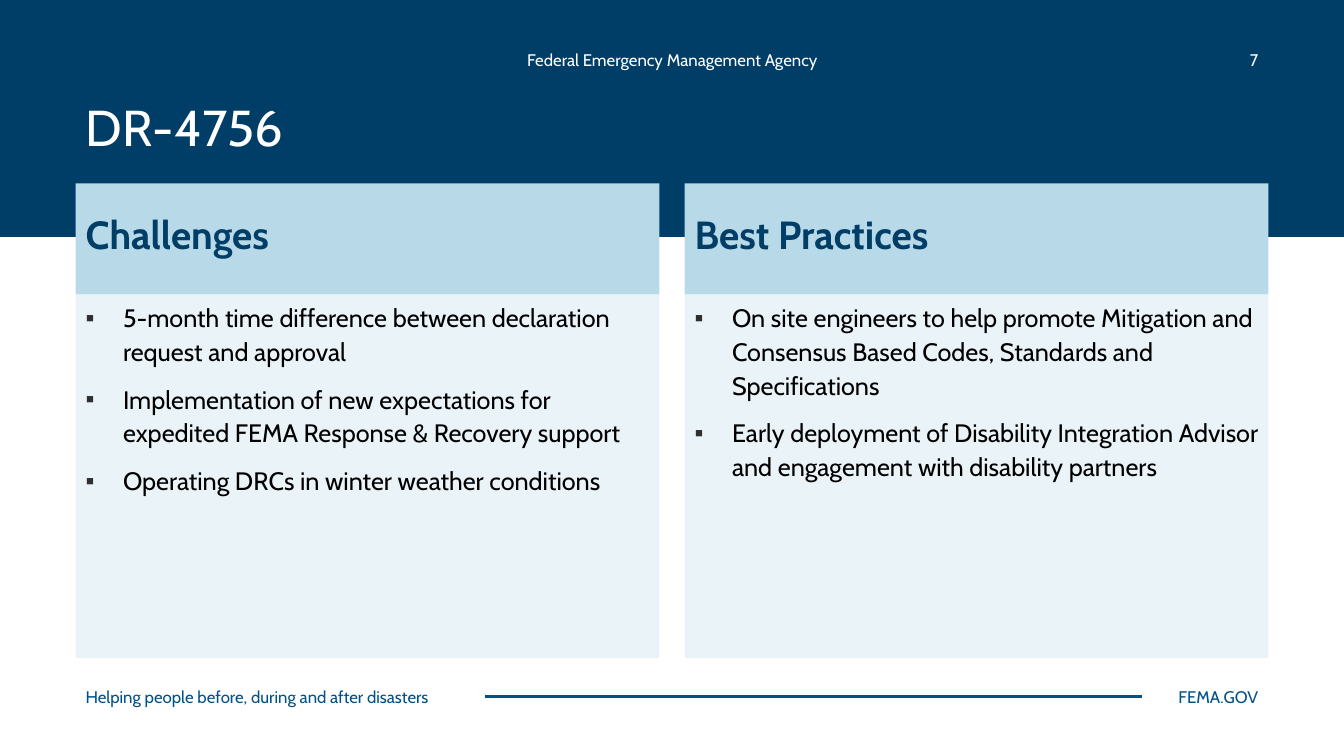
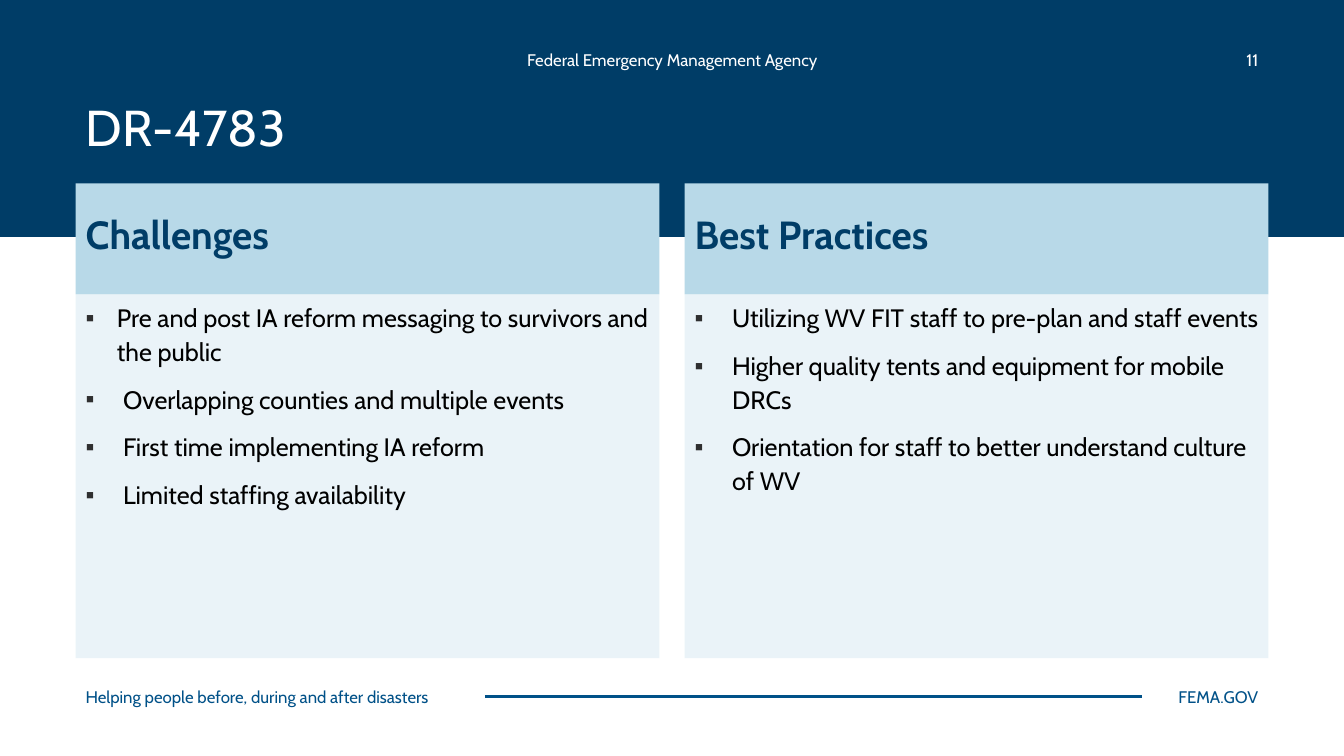
from lxml import etree
from pptx import Presentation
from pptx.dml.color import RGBColor
from pptx.enum.shapes import MSO_CONNECTOR, MSO_SHAPE
from pptx.enum.text import MSO_ANCHOR as Anchor, MSO_AUTO_SIZE as AutoSize, PP_ALIGN as Align
from pptx.oxml.ns import qn
from pptx.util import Inches, Pt

FONT = "Cabin"
NAVY = RGBColor(0x00, 0x3D, 0x67)
BLUE = RGBColor(0x00, 0x51, 0x88)
SKY = RGBColor(0xB8, 0xD9, 0xE8)
PALE = RGBColor(0xD6, 0xE9, 0xF2)
WHITE = RGBColor(0xFF, 0xFF, 0xFF)
BLACK = RGBColor(0x00, 0x00, 0x00)
BULLET_GRAY = "2F2F30"

HANG = 0.37
NARROW_HANG = 0.31

SLIDES = [
    {
        "title": "DR-4756",
        "number": "7",
        "columns": [
            ("Challenges", [
                ("5-month time difference between declaration request and approval", HANG),
                ("Implementation of new expectations for expedited FEMA Response & Recovery support", HANG),
                ("Operating DRCs in winter weather conditions", HANG),
            ]),
            ("Best Practices", [
                ("On site engineers to help promote Mitigation and Consensus Based Codes, "
                 "Standards and Specifications", HANG),
                ("Early deployment of Disability Integration Advisor and engagement with "
                 "disability partners", HANG),
            ]),
        ],
    },
    {
        "title": "DR-4783",
        "number": "11",
        "columns": [
            ("Challenges", [
                ("Pre and post IA reform messaging to survivors and the public", NARROW_HANG),
                ("Overlapping counties and multiple events", HANG),
                ("First time implementing IA reform", HANG),
                ("Limited staffing availability", HANG),
            ]),
            ("Best Practices", [
                ("Utilizing WV FIT staff to pre-plan and staff events", HANG),
                ("Higher quality tents and equipment for mobile DRCs", HANG),
                ("Orientation for staff to better understand culture of WV", HANG),
            ]),
        ],
    },
]

PAGE_WIDTH, PAGE_HEIGHT = 13.33, 7.5
MARGIN = 0.75
COLUMN_WIDTH, COLUMN_GAP = 5.79, 0.25
HEADING_TOP, HEADING_HEIGHT = 1.82, 1.1
LIST_HEIGHT = 3.61
HEADER_TOP, FOOTER_TOP, SMALL_HEIGHT = 0.44, 6.76, 0.3
RIGHT_LABEL_LEFT = 11.58
COMPARISON_LAYOUT = 4
COLUMN_PLACEHOLDERS = [(1, 2), (3, 4)]

LABELS = [
    ("Federal Emergency Management Agency", 5.07, HEADER_TOP, 3.2, Align.CENTER, WHITE),
    ("Helping people before, during and after disasters", MARGIN, FOOTER_TOP, 4.2, Align.LEFT, BLUE),
    ("FEMA.GOV", RIGHT_LABEL_LEFT, FOOTER_TOP, 1, Align.RIGHT, BLUE),
]


def place(shape, left, top, width, height):
    shape.left, shape.top = Inches(left), Inches(top)
    shape.width, shape.height = Inches(width), Inches(height)


def style(para, size, color, align=Align.LEFT, bold=False):
    para.alignment = align
    font = para.font
    font.name, font.size, font.bold = FONT, Pt(size), bold
    font.color.rgb = color


def space(para, line):
    para.line_spacing = Pt(line)
    para.space_before = Pt(10)


def prepare(shape, anchor):
    frame = shape.text_frame
    frame.word_wrap = True
    frame.auto_size = AutoSize.NONE
    frame.vertical_anchor = anchor
    return frame


def fill(shape, color):
    shape.fill.solid()
    shape.fill.fore_color.rgb = color


def add_label(page, text, left, top, width, align, color):
    box = page.shapes.add_textbox(*map(Inches, (left, top, width, SMALL_HEIGHT)))
    para = prepare(box, Anchor.MIDDLE).paragraphs[0]
    para.text = text
    style(para, 12, color, align)
    return box


def add_bullet(para, hang):
    props = para._p.get_or_add_pPr()
    props.set("marL", str(Inches(hang)))
    props.set("indent", str(-Inches(hang)))
    color = etree.SubElement(props, qn("a:buClr"))
    etree.SubElement(color, qn("a:srgbClr"), val=BULLET_GRAY)
    etree.SubElement(props, qn("a:buChar"), char="▪")


def furnish_layout(layout, page):
    for holder in list(layout.placeholders):
        if holder.placeholder_format.idx >= 10:
            holder.element.getparent().remove(holder.element)
    band = page.shapes.add_shape(MSO_SHAPE.RECTANGLE, 0, 0, Inches(PAGE_WIDTH), Inches(2.35))
    band.shadow.inherit = False
    fill(band, NAVY)
    band.line.fill.background()
    labels = [add_label(page, *label) for label in LABELS]
    rule_y = FOOTER_TOP + SMALL_HEIGHT / 2
    rule = page.shapes.add_connector(
        MSO_CONNECTOR.STRAIGHT, Inches(4.81), Inches(rule_y), Inches(11.33), Inches(rule_y))
    rule.line.color.rgb = BLUE
    rule.line.width = Pt(1.5)
    etree.SubElement(rule.element.spPr, qn("a:effectLst"))
    for shape in [band, *labels, rule]:
        layout.shapes.element.append(shape.element)


def fill_heading(heading, text, left):
    place(heading, left, HEADING_TOP, COLUMN_WIDTH, HEADING_HEIGHT)
    fill(heading, SKY)
    para = prepare(heading, Anchor.MIDDLE).paragraphs[0]
    para.text = text
    space(para, 26)
    style(para, 28, NAVY, bold=True)


def fill_list(body, items, left):
    place(body, left, HEADING_TOP + HEADING_HEIGHT, COLUMN_WIDTH, LIST_HEIGHT)
    fill(body, PALE)
    tint = body.element.spPr.find(".//" + qn("a:srgbClr"))
    etree.SubElement(tint, qn("a:alpha"), val="50000")
    frame = prepare(body, Anchor.TOP)
    for index, (text, hang) in enumerate(items):
        para = frame.add_paragraph() if index else frame.paragraphs[0]
        para.text = text
        add_bullet(para, hang)
        space(para, 24)
        style(para, 18, BLACK)


def fill_slide(page, content):
    title = page.shapes.title
    place(title, MARGIN, 1, 11.84, 0.5)
    para = prepare(title, Anchor.MIDDLE).paragraphs[0]
    para.text = content["title"]
    style(para, 36, WHITE)
    holders = {holder.placeholder_format.idx: holder for holder in page.placeholders}
    for column, (heading, items) in enumerate(content["columns"]):
        left = MARGIN + column * (COLUMN_WIDTH + COLUMN_GAP)
        heading_index, list_index = COLUMN_PLACEHOLDERS[column]
        fill_heading(holders[heading_index], heading, left)
        fill_list(holders[list_index], items, left)
    add_label(page, content["number"], RIGHT_LABEL_LEFT, HEADER_TOP, 1, Align.RIGHT, WHITE)


def main():
    deck = Presentation()
    deck.slide_width, deck.slide_height = Inches(PAGE_WIDTH), Inches(PAGE_HEIGHT)
    layout = deck.slide_layouts[COMPARISON_LAYOUT]
    pages = [deck.slides.add_slide(layout) for _ in SLIDES]
    furnish_layout(layout, pages[0])
    for page, content in zip(pages, SLIDES):
        fill_slide(page, content)
    deck.save("out.pptx")


if __name__ == "__main__":
    main()
